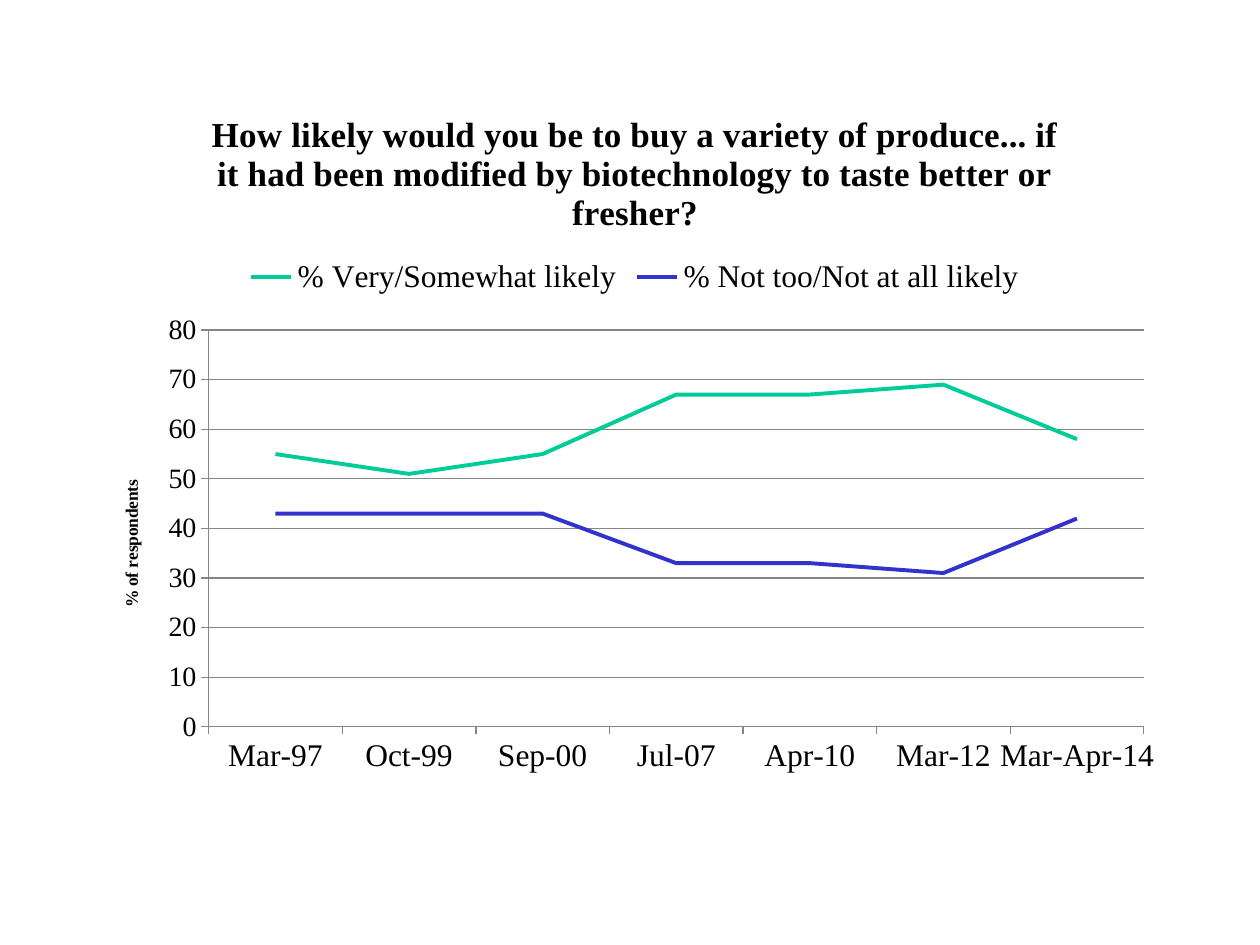
import pptx
import pptx.util
import pptx.chart.data
import pptx.dml.color
import pptx.enum.chart

RGB = pptx.dml.color.RGBColor
Inches, Pt = pptx.util.Inches, pptx.util.Pt
BLACK, GREY = RGB(0, 0, 0), RGB(0x86, 0x86, 0x86)
GREEN, BLUE = RGB(0x00, 0xCC, 0x99), RGB(0x33, 0x33, 0xCC)

TITLE = ("How likely would you be to buy a variety of produce... if it had "
         "been modified by biotechnology to taste better or fresher?")
DATES = ["Mar-97", "Oct-99", "Sep-00", "Jul-07", "Apr-10", "Mar-12", "Mar-Apr-14"]
SERIES = [
    ("% Very/Somewhat likely", [55, 51, 55, 67, 67, 69, 58], GREEN),
    ("% Not too/Not at all likely", [43, 43, 43, 33, 33, 31, 42], BLUE),
]


class Deck:
    """Hold the text style and current slide, and add styled elements."""

    def __init__(self, show, face):
        self.face = face
        self.slide = show.slides.add_slide(show.slide_layouts[6])

    def font(self, font, size, bold=False):
        style = {"name": self.face, "size": Pt(size), "bold": bold}
        for key, value in style.items():
            setattr(font, key, value)
        font.color.rgb = BLACK

    def line(self, form, color, width):
        form.line.color.rgb = color
        form.line.width = Pt(width)

    def title(self, owner, text, size):
        frame = owner.text_frame
        frame.text = text
        self.font(frame.paragraphs[0].runs[0].font, size, True)

    def axis(self, axis, size):
        axis.major_tick_mark = pptx.enum.chart.XL_TICK_MARK.OUTSIDE
        self.font(axis.tick_labels.font, size)
        self.line(axis.format, GREY, 0.75)

    def chart(self, left, top, width, height):
        data = pptx.chart.data.CategoryChartData()
        data.categories = DATES
        for name, values, _ in SERIES:
            data.add_series(name, values)
        box = [Inches(n) for n in (left, top, width, height)]
        chart = self.slide.shapes.add_chart(
            pptx.enum.chart.XL_CHART_TYPE.LINE, *box, data).chart
        self.font(chart.font, 10)
        self.title(chart.chart_title, TITLE, 20)

        chart.has_legend = True
        chart.legend.position = pptx.enum.chart.XL_LEGEND_POSITION.TOP
        chart.legend.include_in_layout = False
        self.font(chart.legend.font, 18)

        self.axis(chart.category_axis, 18)
        scale = chart.value_axis
        self.axis(scale, 16)
        for key, value in {"minimum_scale": 0, "maximum_scale": 80,
                           "major_unit": 10, "has_major_gridlines": True}.items():
            setattr(scale, key, value)
        self.line(scale.major_gridlines.format, GREY, 0.75)
        self.title(scale.axis_title, "% of respondents", 10)

        plot = chart.plots[0]
        plot.vary_by_categories = False
        for series, (_, _, color) in zip(plot.series, SERIES):
            series.smooth = False
            series.marker.style = pptx.enum.chart.XL_MARKER_STYLE.NONE
            self.line(series.format, color, 2.25)


def main():
    show = pptx.Presentation()
    show.slide_width, show.slide_height = Inches(10), Inches(7.5)
    deck = Deck(show, "Times New Roman")
    deck.chart(0.75, 0.67, 8.58, 5.58)
    show.save("out.pptx")


if __name__ == "__main__":
    main()
